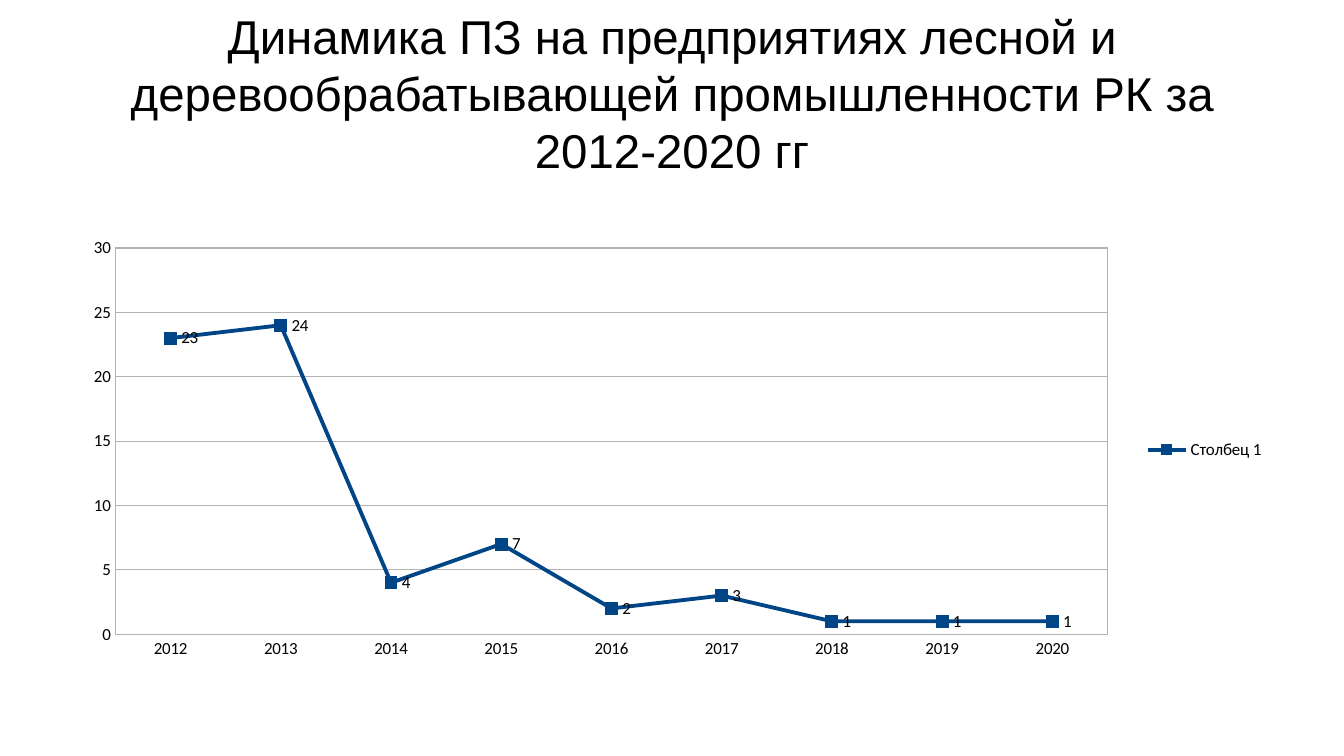
from dataclasses import dataclass

from lxml import etree
from pptx import Presentation
from pptx.chart.axis import _BaseAxis
from pptx.chart.chart import Chart
from pptx.chart.data import CategoryChartData
from pptx.dml.color import RGBColor
from pptx.dml.line import LineFormat
from pptx.enum import chart as charts, text
from pptx.oxml import parse_xml
from pptx.oxml.ns import nsdecls, qn
from pptx.util import Pt

BLACK = RGBColor(0x00, 0x00, 0x00)
GREY = RGBColor(0xB3, 0xB3, 0xB3)
NAVY = RGBColor(0x00, 0x45, 0x86)

TITLE = ("Динамика ПЗ на предприятиях лесной и деревообрабатывающей "
         "промышленности РК за 2012-2020 гг")
YEARS = [str(year) for year in range(2012, 2021)]
VALUES = (23, 24, 4, 7, 2, 3, 1, 1, 1)


@dataclass(frozen=True)
class Frame:
    left: float
    top: float
    width: float
    height: float

    def lengths(self) -> tuple[Pt, Pt, Pt, Pt]:
        return Pt(self.left), Pt(self.top), Pt(self.width), Pt(self.height)


TITLE_FRAME = Frame(39.6, 8, 714.24, 93.6)
CHART_FRAME = Frame(39.6, 136.08, 714.24, 259.2)
PLOT_SHARE = Frame(0.04, 0.04, 0.82, 0.88)  # shares of the chart frame


def style_line(line: LineFormat, color: RGBColor, width: float) -> None:
    line.color.rgb = color
    line.width = Pt(width)


def style_axis(axis: _BaseAxis, gridlines: bool) -> None:
    axis.major_tick_mark = axis.minor_tick_mark = charts.XL_TICK_MARK.NONE
    axis.tick_labels.font.size = Pt(10)
    style_line(axis.format.line, GREY, 0.75)
    axis.has_major_gridlines = gridlines
    if gridlines:
        style_line(axis.major_gridlines.format.line, GREY, 0.75)


def place_plot(chart: Chart, share: Frame) -> None:
    """Fix the inner plot area and give it a thin border."""
    plot_area = chart._chartSpace.chart.plotArea
    for layout in plot_area.findall(qn("c:layout")):
        plot_area.remove(layout)
    layout = parse_xml(
        f'<c:layout {nsdecls("c")}><c:manualLayout>'
        '<c:layoutTarget val="inner"/><c:xMode val="edge"/><c:yMode val="edge"/>'
        f'<c:x val="{share.left}"/><c:y val="{share.top}"/>'
        f'<c:w val="{share.width}"/><c:h val="{share.height}"/>'
        '</c:manualLayout></c:layout>')
    plot_area.insert(0, layout)
    border = etree.SubElement(plot_area, qn("c:spPr"))
    etree.SubElement(border, qn("a:noFill"))
    line = etree.SubElement(border, qn("a:ln"), w=str(Pt(0.75)))
    fill = etree.SubElement(line, qn("a:solidFill"))
    etree.SubElement(fill, qn("a:srgbClr"), val=str(GREY))


deck = Presentation()
deck.slide_width, deck.slide_height = Pt(793.44), Pt(446.4)
page = deck.slides.add_slide(deck.slide_layouts[5])

# Title
title = page.shapes.title
title.left, title.top, title.width, title.height = TITLE_FRAME.lengths()
box = title.text_frame
box.text = TITLE
box.word_wrap = True
box.auto_size = text.MSO_AUTO_SIZE.NONE
box.vertical_anchor = text.MSO_ANCHOR.MIDDLE
box.margin_left = box.margin_top = box.margin_right = box.margin_bottom = 0
para = box.paragraphs[0]
para.alignment = text.PP_ALIGN.CENTER
para.font.name, para.font.size = "Arial", Pt(28)
para.font.color.rgb = BLACK

# Line chart
data = CategoryChartData(number_format="General")
data.categories = YEARS
data.add_series("Столбец 1", VALUES)
chart = page.shapes.add_chart(
    charts.XL_CHART_TYPE.LINE_MARKERS, *CHART_FRAME.lengths(), data).chart
chart.has_title = False
chart.font.name, chart.font.size = "Calibri", Pt(10)
chart.font.color.rgb = BLACK
place_plot(chart, PLOT_SHARE)

# Axes and legend
style_axis(chart.category_axis, gridlines=False)
style_axis(chart.value_axis, gridlines=True)
chart.value_axis.minimum_scale, chart.value_axis.maximum_scale = 0, 30
chart.value_axis.major_unit = 5
chart.has_legend = True
chart.legend.position = charts.XL_LEGEND_POSITION.RIGHT
chart.legend.include_in_layout = False
chart.legend.font.size = Pt(10)

# Series with square markers and value labels
plot = chart.plots[0]
plot.vary_by_categories = False
series = plot.series[0]
series.smooth = False
style_line(series.format.line, NAVY, 2.27)
series.marker.style = charts.XL_MARKER_STYLE.SQUARE
series.marker.size = 7
series.marker.format.fill.solid()
series.marker.format.fill.fore_color.rgb = NAVY
series.marker.format.line.fill.background()
labels = series.data_labels
labels.show_value = True
labels.position = charts.XL_LABEL_POSITION.RIGHT
labels.font.size = Pt(10)

deck.save("out.pptx")
